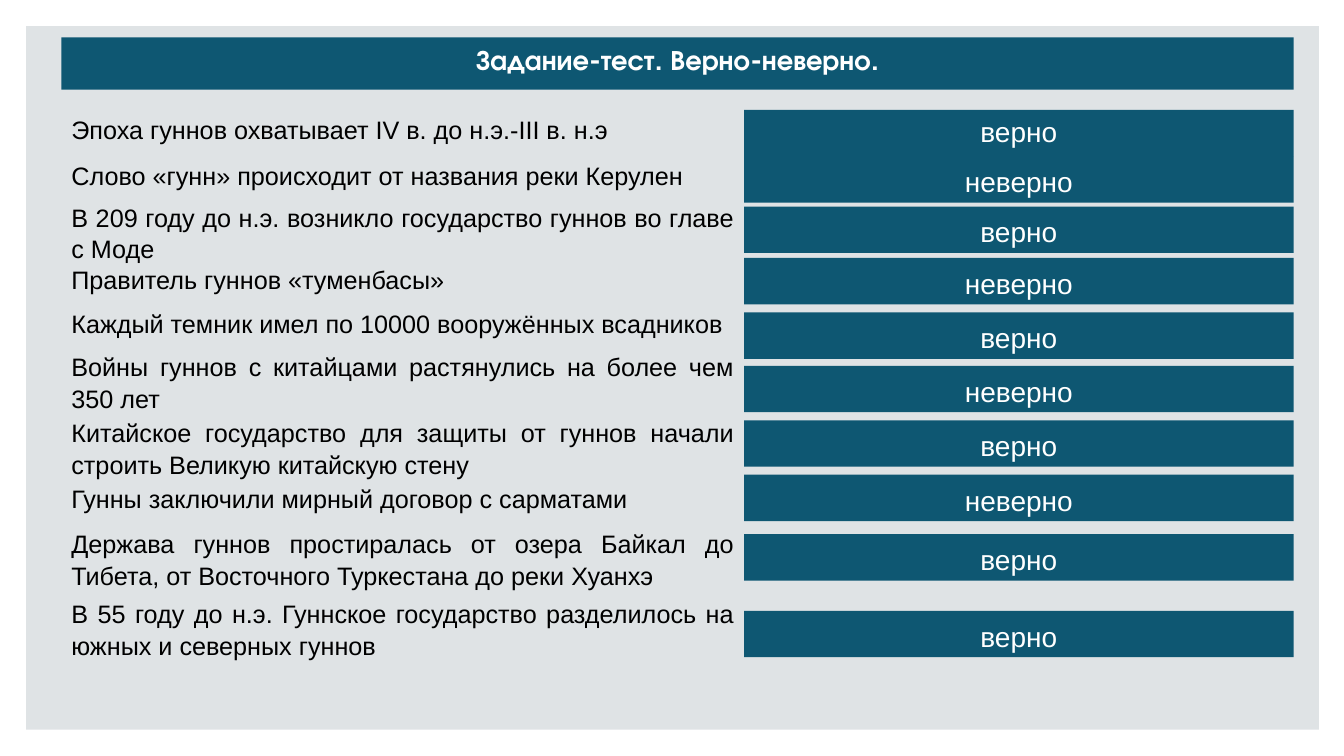
"""Build a true-or-false quiz slide about the Huns."""
from pptx import Presentation
from pptx.dml.color import RGBColor
from pptx.enum import shapes, text
from pptx.util import Inches, Pt

TEAL = RGBColor(0x0E, 0x57, 0x72)
PANEL = RGBColor(0xDF, 0xE3, 0xE5)
WHITE = RGBColor(0xFF, 0xFF, 0xFF)
BLACK = RGBColor(0, 0, 0)
LEFT, SPLIT, RIGHT = 0.61, 7.38, 12.83
ROW_H = 0.46
ALIGN = text.PP_ALIGN


def add_rect(left, top, width, height, fill):
    sp = s.shapes.add_shape(shapes.MSO_SHAPE.RECTANGLE, Inches(left), Inches(top),
                            Inches(width), Inches(height))
    sp.shadow.inherit = False
    sp.fill.solid()
    sp.fill.fore_color.rgb = fill
    sp.line.fill.background()
    return sp


def write(sp, words, size, color, align, spacing=1.0, font="Arial", bold=False):
    tf = sp.text_frame
    tf.word_wrap = True
    tf.auto_size = text.MSO_AUTO_SIZE.NONE
    tf.vertical_anchor = text.MSO_ANCHOR.TOP
    p = tf.paragraphs[0]
    p.text = words
    p.alignment = align
    p.line_spacing = spacing
    p.space_before = Pt(9)
    p.font.name = font
    p.font.size = Pt(size)
    p.font.bold = bold
    p.font.color.rgb = color


prs = Presentation()
prs.slide_width, prs.slide_height = Inches(13.33), Inches(7.5)
s = prs.slides.add_slide(prs.slide_layouts[5])

title = s.shapes.title
title.left, title.top = Inches(LEFT), Inches(0.37)
title.width, title.height = Inches(RIGHT - LEFT), Inches(0.52)
title.fill.solid()
title.fill.fore_color.rgb = TEAL
write(title, "Задание-тест. Верно-неверно.", 20, WHITE, ALIGN.CENTER,
      font="TeX Gyre Adventor", bold=True)

panel = add_rect(0.26, 0.26, 12.82, 6.98, PANEL)
title.element.addprevious(panel.element)

quiz = [
    (1.07, 0.46, "Эпоха гуннов охватывает IV в. до н.э.-III в. н.э", 1.09, True),
    (1.53, 0.46, "Слово «гунн» происходит от названия реки Керулен", 1.55, False),
    (1.94, 0.51, "В 209 году до н.э. возникло государство гуннов во главе с Моде",
     2.05, True),
    (2.56, 0.46, "Правитель гуннов «туменбасы»", 2.56, False),
    (2.99, 0.46, "Каждый темник имел по 10000 вооружённых всадников", 3.1, True),
    (3.42, 0.83, "Войны гуннов с китайцами растянулись на более чем 350 лет",
     3.63, False),
    (4.08, 0.84, "Китайское государство для защиты от гуннов начали строить "
     "Великую китайскую стену", 4.17, True),
    (4.73, 0.46, "Гунны заключили мирный договор с сарматами", 4.71, False),
    (5.18, 0.46, "Держава гуннов простиралась от озера Байкал до Тибета, "
     "от Восточного Туркестана до реки Хуанхэ", 5.3, True),
    (5.87, 0.46, "В 55 году до н.э. Гуннское государство разделилось "
     "на южных и северных гуннов", 6.06, True),
]
for i, (top, height, statement, answer_top, is_true) in enumerate(quiz):
    box = s.shapes.add_textbox(Inches(LEFT), Inches(top),
                               Inches(SPLIT - LEFT), Inches(height))
    write(box, statement, 18, BLACK, ALIGN.LEFT if i < 2 else ALIGN.JUSTIFY, 1.05)
    answer = add_rect(SPLIT, answer_top, RIGHT - SPLIT, ROW_H, TEAL)
    write(answer, "верно" if is_true else "неверно", 20, WHITE, ALIGN.CENTER,
          1.1 if i else 1.0)

prs.save("out.pptx")
